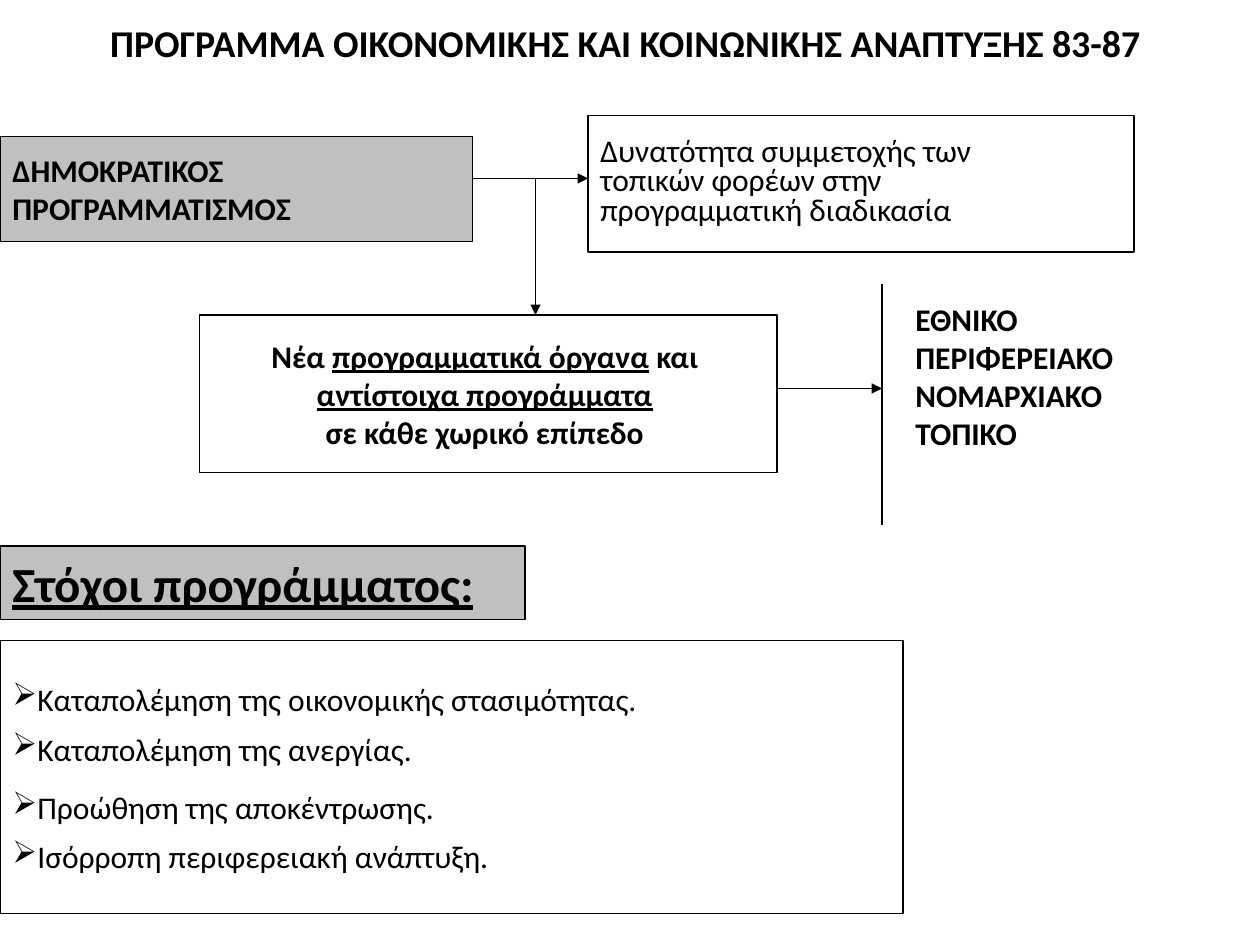
from lxml import etree
from pptx import Presentation
from pptx.dml.color import RGBColor
from pptx.enum.shapes import MSO_CONNECTOR, MSO_SHAPE
from pptx.enum.text import MSO_ANCHOR, PP_ALIGN
from pptx.oxml.ns import qn
from pptx.util import Pt

RECT, STRAIGHT = MSO_SHAPE.RECTANGLE, MSO_CONNECTOR.STRAIGHT
LEFT, CENTER = PP_ALIGN.LEFT, PP_ALIGN.CENTER
TOP, MIDDLE = MSO_ANCHOR.TOP, MSO_ANCHOR.MIDDLE
FONT, BLACK, GREY = "Calibri", "000000", "C0C0C0"

# Content: a paragraph is a list of (text, underlined) runs or a plain string
TITLE = ["ΠΡΟΓΡΑΜΜΑ ΟΙΚΟΝΟΜΙΚΗΣ ΚΑΙ ΚΟΙΝΩΝΙΚΗΣ ΑΝΑΠΤΥΞΗΣ 83-87 "]
PLANNING = ["ΔΗΜΟΚΡΑΤΙΚΟΣ", "ΠΡΟΓΡΑΜΜΑΤΙΣΜΟΣ"]
PARTICIPATION = ["Δυνατότητα συμμετοχής των", "τοπικών φορέων στην",
                 "προγραμματική διαδικασία"]
BODIES = [
    [("Νέα ", False), ("προγραμματικά όργανα", True), (" και ", False)],
    [("αντίστοιχα προγράμματα", True), (" ", False)],
    "σε κάθε χωρικό επίπεδο ",
]
LEVELS = ["ΕΘΝΙΚΟ", "ΠΕΡΙΦΕΡΕΙΑΚΟ", "ΝΟΜΑΡΧΙΑΚΟ", "ΤΟΠΙΚΟ"]
GOALS_HEAD = [[("Στόχοι προγράμματος:", True)]]
GOALS = ["Καταπολέμηση της οικονομικής στασιμότητας.",
         "Καταπολέμηση της ανεργίας.",
         "Προώθηση της αποκέντρωσης.",
         "Ισόρροπη περιφερειακή ανάπτυξη."]
GOAL_GAPS = [0.9, 6, 6, 0]  # space before and after each goal

# Boxes: left, top, width, height
PLANNING_BOX = (0, 78, 270, 60)
PARTICIPATION_BOX = (336, 66, 312, 78)
BODIES_BOX = (114, 180, 330, 90)
LEVELS_X, BRANCH_X = 504, 306


def rgb(color):
    return RGBColor.from_string(color)


def write(sp, paras, size=18, bold=False, align=LEFT, anchor=MIDDLE,
          spacing=None, gaps=None, bullet=None):
    tf = sp.text_frame
    tf.word_wrap = True
    tf.vertical_anchor = anchor
    for i, para in enumerate(paras):
        p = tf.paragraphs[0] if i == 0 else tf.add_paragraph()
        p.alignment = align
        if spacing:
            p.line_spacing = spacing
        if gaps:
            p.space_before = p.space_after = Pt(gaps[i])
        if bullet:
            etree.SubElement(p._p.get_or_add_pPr(), qn("a:buChar")).set("char", bullet)
        for text, underline in [(para, False)] if isinstance(para, str) else para:
            r = p.add_run()
            r.text = text
            r.font.name, r.font.size = FONT, Pt(size)
            r.font.bold, r.font.underline = bold, underline
            r.font.color.rgb = rgb(BLACK)


def add_text(s, box, paras, **fmt):
    write(s.shapes.add_textbox(*map(Pt, box)), paras, **fmt)


def add_box(s, box, paras, fill=None, **fmt):
    sp = s.shapes.add_shape(RECT, *map(Pt, box))
    sp.shadow.inherit = False
    if fill:
        sp.fill.solid()
        sp.fill.fore_color.rgb = rgb(fill)
    else:
        sp.fill.background()
    sp.line.color.rgb = rgb(BLACK)
    sp.line.width = Pt(0.75)
    write(sp, paras, **fmt)


def add_line(s, x1, y1, x2, y2, arrow=True):
    cn = s.shapes.add_connector(STRAIGHT, Pt(x1), Pt(y1), Pt(x2), Pt(y2))
    cn.line.color.rgb = rgb(BLACK)
    cn.line.width = Pt(0.75)
    if arrow:
        etree.SubElement(cn.line._get_or_add_ln(), qn("a:tailEnd")).set("type", "triangle")
    etree.SubElement(cn._element.spPr, qn("a:effectLst"))


def main():
    prs = Presentation()
    prs.slide_width, prs.slide_height = Pt(720), Pt(540)
    s = prs.slides.add_slide(prs.slide_layouts[6])

    # Title
    add_text(s, (54, 0, 612, 48), TITLE, size=21.6, bold=True, align=CENTER)

    # Planning diagram
    add_box(s, PLANNING_BOX, PLANNING, fill=GREY, bold=True)
    add_box(s, PARTICIPATION_BOX, PARTICIPATION, spacing=0.7,
            gaps=[0.9] * len(PARTICIPATION))
    add_box(s, BODIES_BOX, BODIES, bold=True, align=CENTER)
    add_text(s, (516, 168, 204, 122), LEVELS, bold=True, anchor=TOP)

    # Arrows between the boxes, and the bar beside the levels
    left, top, width, _ = PLANNING_BOX
    flow_y = top + 24
    add_line(s, left + width, flow_y, PARTICIPATION_BOX[0], flow_y)
    left, top, width, _ = BODIES_BOX
    add_line(s, BRANCH_X, flow_y, BRANCH_X, top)
    add_line(s, left + width, top + 42, LEVELS_X, top + 42)
    add_line(s, LEVELS_X, 162, LEVELS_X, 300, arrow=False)

    # Goals
    add_box(s, (0, 312, 300, 42), GOALS_HEAD, fill=GREY, size=28, bold=True)
    add_box(s, (0, 366, 516, 156), GOALS, gaps=GOAL_GAPS, bullet="➢")

    prs.save("out.pptx")


if __name__ == "__main__":
    main()
